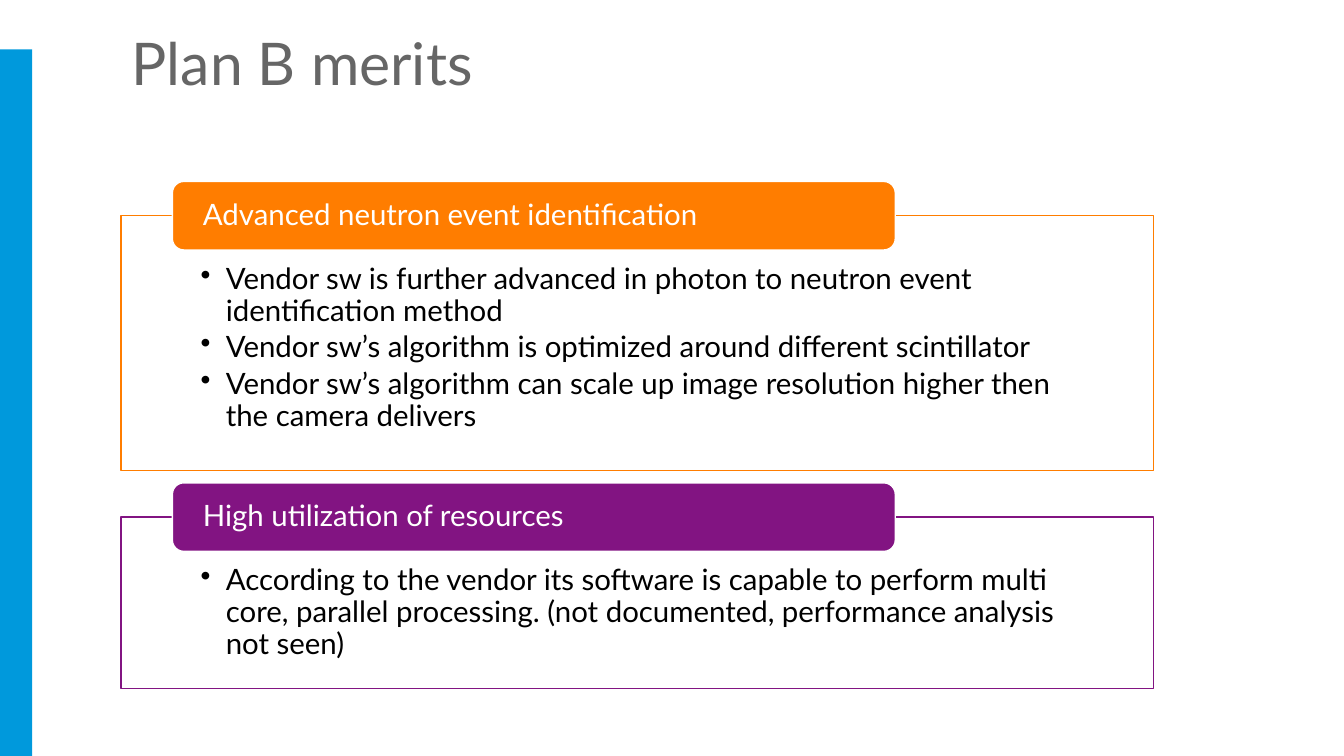
import pptx
import pptx.util
import pptx.dml.color
import pptx.enum.shapes
import pptx.enum.text
import pptx.oxml
import pptx.oxml.ns

Inches = pptx.util.Inches
SHAPES = pptx.enum.shapes.MSO_SHAPE
ANCHORS = pptx.enum.text.MSO_ANCHOR
COLORS = {
    "bar": "0099DC",
    "title": "666666",
    "orange": "FF7D00",
    "purple": "821482",
    "white": "FFFFFF",
    "black": "000000",
}
MERITS = [
    # heading, colour, panel top, panel height, points
    ("Advanced neutron event identification", "orange", 2.14, 2.53, [
        "Vendor sw is further advanced in photon to neutron event identification method",
        "Vendor sw’s algorithm is optimized around different scintillator",
        "Vendor sw’s algorithm can scale up image resolution higher then the camera delivers",
    ]),
    ("High utilization of resources", "purple", 5.13, 1.7, [
        "According to the vendor its software is capable to perform multi core, "
        "parallel processing. (not documented, performance analysis not seen)",
    ]),
]


def set_all(target, values):
    for name, value in values.items():
        setattr(target, name, value)


class SlideBuilder:
    font = "Lato"

    def __init__(self, page):
        self.page = page

    def color(self, name):
        return pptx.dml.color.RGBColor.from_string(COLORS[name])

    def shape(self, kind, place, fill, line=None, opacity=None):
        box = self.page.shapes.add_shape(kind, *map(Inches, place))
        box.shadow.inherit = False
        box.fill.solid()
        box.fill.fore_color.rgb = self.color(fill)
        if opacity is not None:
            tint = box._element.spPr.find(".//" + pptx.oxml.ns.qn("a:srgbClr"))
            tint.append(pptx.oxml.parse_xml(
                f'<a:alpha {pptx.oxml.ns.nsdecls("a")} val="{opacity * 1000}"/>'))
        if line:
            box.line.color.rgb = self.color(line)
            box.line.width = pptx.util.Pt(1)
        else:
            box.line.fill.background()
        return box

    def add_text(self, box, lines, size, color, margins, anchor=ANCHORS.TOP,
                 bullets=False):
        frame = box.text_frame
        sides = ("margin_left", "margin_top", "margin_right", "margin_bottom")
        set_all(frame, dict(zip(sides, map(Inches, margins))))
        set_all(frame, {"word_wrap": True, "vertical_anchor": anchor})
        for index, line in enumerate(lines):
            para = frame.add_paragraph() if index else frame.paragraphs[0]
            set_all(para, {"alignment": pptx.enum.text.PP_ALIGN.LEFT,
                           "line_spacing": 0.9})
            if bullets:
                para.space_after = pptx.util.Pt(3.6)
                self.bullet(para)
            span = para.add_run()
            span.text = line
            set_all(span.font, {"name": self.font, "size": pptx.util.Pt(size)})
            span.font.color.rgb = self.color(color)

    def bullet(self, para):
        props = para._p.get_or_add_pPr()
        props.set("marL", str(Inches(0.25)))
        props.set("indent", str(Inches(-0.25)))
        props.append(pptx.oxml.parse_xml(
            f'<a:buChar {pptx.oxml.ns.nsdecls("a")} char="•"/>'))

    def title(self, text):
        box = self.page.shapes.add_textbox(*map(Inches, (1.21, 0.29, 10.24, 0.72)))
        self.add_text(box, [text], 42, "title", (0.1, 0.05, 0.1, 0.02))

    def merit(self, heading, color, top, height, points):
        panel = self.shape(SHAPES.RECTANGLE, (1.2, top, 10.24, height),
                           "white", color, opacity=90)
        self.add_text(panel, points, 21, "black", (0.79, 0.48, 0.79, 0.16),
                      bullets=True)
        label = self.shape(SHAPES.ROUNDED_RECTANGLE,
                           (1.71, top - 0.34, 7.17, 0.68), color, "white")
        self.add_text(label, [heading], 21, "white", (0.27, 0, 0.27, 0),
                      anchor=ANCHORS.MIDDLE)


def main():
    deck = pptx.Presentation()
    set_all(deck, {"slide_width": Inches(13.33), "slide_height": Inches(7.5)})
    builder = SlideBuilder(deck.slides.add_slide(deck.slide_layouts[6]))

    # Side bar and title
    builder.shape(SHAPES.RECTANGLE, (0, 0.49, 0.32, 7.01), "bar")
    builder.title("Plan B merits")

    # Panels with their headings
    for merit in MERITS:
        builder.merit(*merit)

    deck.save("out.pptx")


if __name__ == "__main__":
    main()
